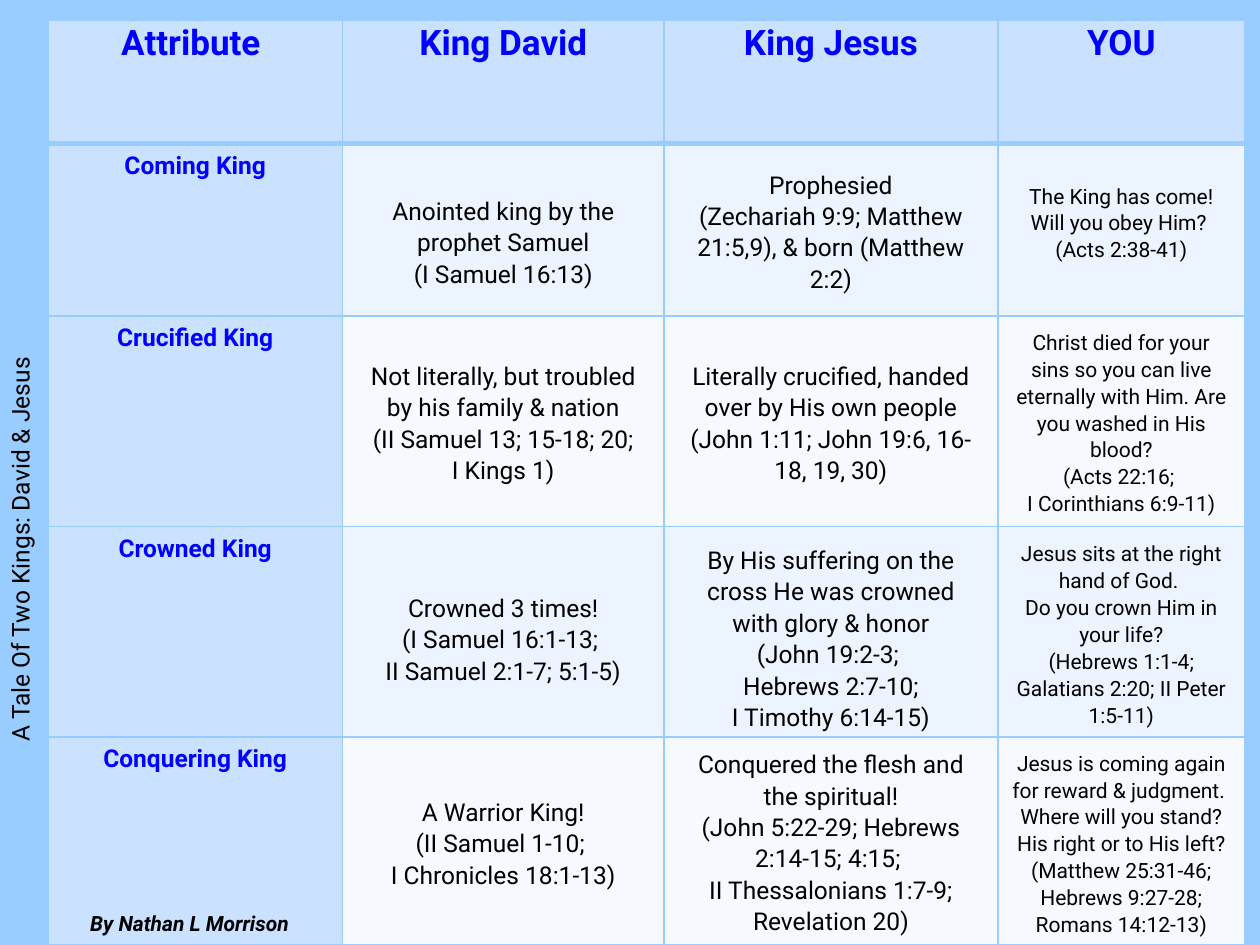
from itertools import accumulate

from lxml import etree
from pptx import Presentation
from pptx import util as u
from pptx.dml.color import RGBColor
from pptx.enum import text
from pptx.oxml.ns import qn

FONT = "Roboto"
COLORS = {"sky": "99CCFF", "head": "CAE2FF", "odd": "ECF4FF", "even": "F6FAFF",
          "blue": "0000FF", "black": "000000"}
LEFT, TOP = 0.38, 0.16
COLUMNS = [2.34, 2.55, 2.65, 1.96]
ROWS = [0.98, 1.37, 1.67, 1.67, 1.65]
COLUMN_EDGES = list(accumulate(COLUMNS, initial=LEFT))
ROW_EDGES = list(accumulate(ROWS, initial=TOP))
SPACING = 1.07
LABEL_HEIGHT = 0.74

HEADINGS = ["Attribute ", "King David", "King Jesus", "YOU"]
LABELS = ["Coming King", "Crucified King", "Crowned King", "Conquering King"]
# row, column, width, height, drop below the cell's middle, paragraphs
PASSAGES = [
    (1, 1, 2.41, 0.83, 0.08, ["Anointed king by the prophet Samuel", "(I Samuel 16:13)"]),
    (1, 2, 2.54, 1.09, 0, ["Prophesied",
                           "(Zechariah 9:9; Matthew 21:5,9), & born (Matthew 2:2)"]),
    (1, 3, 1.87, 0.73, -0.07, ["The King has come!", "Will you obey Him? ",
                               "(Acts 2:38-41)"]),
    (2, 1, 2.34, 1.09, 0, ["Not literally, but troubled by his family & nation",
                           "(II Samuel 13; 15-18; 20; I Kings 1)"]),
    (2, 2, 2.5, 1.09, 0, ["Literally crucified, handed over by His own people",
                          "(John 1:11; John 19:6, 16-18, 19, 30)"]),
    (2, 3, 1.88, 1.59, 0, ["Christ died for your sins so you can live eternally with Him. "
                           "Are you washed in His blood?",
                           "(Acts 22:16; ", "I Corinthians 6:9-11)"]),
    (3, 1, 2.44, 0.83, 0.04, ["Crowned 3 times!", "(I Samuel 16:1-13; ",
                              "II Samuel 2:1-7; 5:1-5)"]),
    (3, 2, 2.48, 1.59, 0.04, ["By His suffering on the cross He was crowned with glory & honor",
                              "(John 19:2-3; ", "Hebrews 2:7-10;", "I Timothy 6:14-15)"]),
    (3, 3, 1.98, 1.59, 0.01, ["Jesus sits at the right hand of God. ",
                              "Do you crown Him in your life?",
                              "(Hebrews 1:1-4; Galatians 2:20; II Peter 1:5-11)"]),
    (4, 1, 2.4, 0.83, 0, ["A Warrior King!", "(II Samuel 1-10; ", "I Chronicles 18:1-13)"]),
    (4, 2, 2.48, 1.59, 0, ["Conquered the flesh and the spiritual!",
                           "(John 5:22-29; Hebrews 2:14-15; 4:15; ",
                           "II Thessalonians 1:7-9; Revelation 20)"]),
    (4, 3, 1.98, 1.59, 0.01, ["Jesus is coming again for reward & judgment. ",
                              "Where will you stand? His right or to His left?",
                              "(Matthew 25:31-46; Hebrews 9:27-28; Romans 14:12-13)"]),
]


def rgb(name):
    return RGBColor.from_string(COLORS[name])


def write(frame, lines, size, color="black", bold=False, italic=False, spacing=None):
    """Fill a text frame with centred paragraphs of one style."""
    frame.word_wrap = True
    frame.text = "\n".join(lines)
    for paragraph in frame.paragraphs:
        paragraph.alignment = text.PP_ALIGN.CENTER
        paragraph.line_spacing = spacing
        font = paragraph.font
        font.name, font.size = FONT, u.Pt(size)
        font.bold, font.italic = bold, italic
        font.color.rgb = rgb(color)


def add_text(slide, box, lines, size, grow=True, **style):
    frame = slide.shapes.add_textbox(*map(u.Inches, box)).text_frame
    write(frame, lines, size, **style)
    if grow:
        frame.auto_size = text.MSO_AUTO_SIZE.SHAPE_TO_FIT_TEXT


def set_borders(cell, top, bottom):
    """Draw all four sides; top and bottom are widths in points."""
    for side, width in (("L", 1), ("R", 1), ("T", top), ("B", bottom)):
        line = etree.SubElement(cell._tc.get_or_add_tcPr(), qn(f"a:ln{side}"),
                                w=str(u.Pt(width)))
        fill = etree.SubElement(line, qn("a:solidFill"))
        etree.SubElement(fill, qn("a:srgbClr"), val=COLORS["sky"])


def add_grid(slide):
    box = (LEFT, TOP, sum(COLUMNS), sum(ROWS))
    table = slide.shapes.add_table(len(ROWS), len(COLUMNS), *map(u.Inches, box)).table
    for column, width in zip(table.columns, COLUMNS):
        column.width = u.Inches(width)
    for r, height in enumerate(ROWS):
        table.rows[r].height = u.Inches(height)
        for c in range(len(COLUMNS)):
            cell = table.cell(r, c)
            set_borders(cell, top=3 if r == 1 else 1, bottom=3 if r == 0 else 1)
            shade = "head" if r == 0 or c == 0 else "odd" if r % 2 else "even"
            cell.fill.solid()
            cell.fill.fore_color.rgb = rgb(shade)
    for c, heading in enumerate(HEADINGS):
        cell = table.cell(0, c)
        cell.margin_left = cell.margin_right = u.Inches(0.05)
        cell.margin_top = cell.margin_bottom = 0
        write(cell.text_frame, [heading], 20, "blue", bold=True, spacing=SPACING)


def add_passage(slide, row, column, width, height, drop, lines):
    """Centre a passage on its table cell."""
    left = COLUMN_EDGES[column] + (COLUMNS[column] - width) / 2
    top = ROW_EDGES[row] + (ROWS[row] - height) / 2 + drop
    size = 12 if column == 3 else 14
    add_text(slide, (left, top, width, height), lines, size, spacing=SPACING)


def place_side_title(title):
    title.left, title.top, title.width, title.height = map(
        u.Inches, (-1.85, 4.19, 4.02, 0.34))
    title.rotation = 270
    frame = title.text_frame
    frame.auto_size = text.MSO_AUTO_SIZE.NONE
    frame.vertical_anchor = text.MSO_ANCHOR.TOP
    write(frame, ["A Tale Of Two Kings: David & Jesus"], 14)


def main():
    deck = Presentation()
    deck.slide_width, deck.slide_height = u.Inches(10), u.Inches(7.5)
    slide = deck.slides.add_slide(deck.slide_layouts[5])
    slide.background.fill.solid()
    slide.background.fill.fore_color.rgb = rgb("sky")

    place_side_title(slide.shapes.title)
    add_grid(slide)
    for top, label in zip(ROW_EDGES[1:], LABELS):
        add_text(slide, (LEFT, top, COLUMNS[0], LABEL_HEIGHT), [label], 14,
                 color="blue", bold=True)
    for passage in PASSAGES:
        add_passage(slide, *passage)
    add_text(slide, (0.34, 7.18, 2.33, 0.52), ["By Nathan L Morrison"], 12,
             grow=False, bold=True, italic=True)
    deck.save("out.pptx")


if __name__ == "__main__":
    main()
